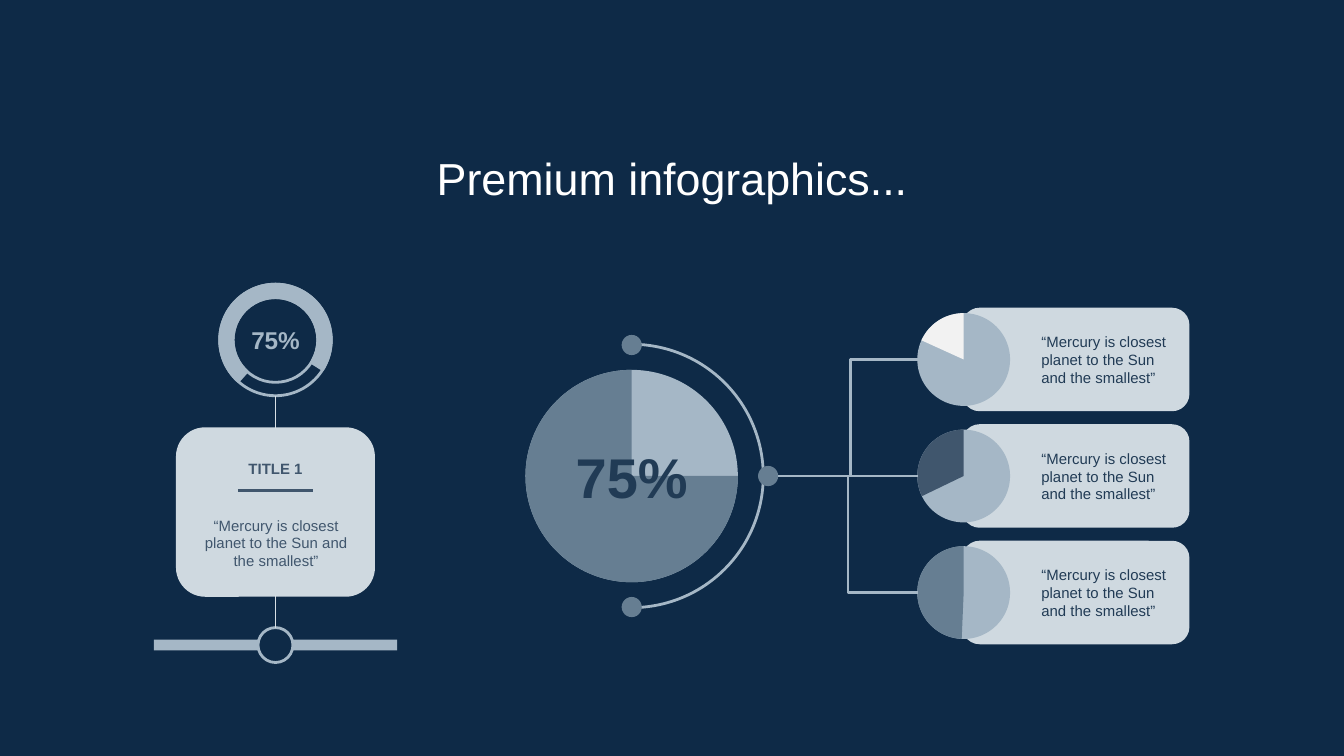
from dataclasses import dataclass

from lxml import etree
from pptx import Presentation
from pptx import util as u
from pptx.dml.color import RGBColor
from pptx.enum import shapes, text
from pptx.oxml import ns

COLORS = {
    "night": "0E2A47", "navy": "213B55", "slate": "40566D", "steel": "667E92",
    "mist": "A5B7C6", "card": "CFD9E0", "thread": "D7DFE5", "light": "F2F2F2",
    "white": "FFFFFF",
}
QUOTE = "“Mercury is closest planet to the Sun and the smallest”"
FONT = "Arial"
DEGREE = 0.6  # one degree in the units of a shape adjustment
TOP_ANGLE = 270
WIDTH, HEIGHT = u.Inches(10), u.Inches(5.625)
CELL = WIDTH / 100  # the grid has 100 columns and 56.25 rows
AXIS = 35.42  # row through the middle of the large pie
PITCH = 8.67  # rows from one card to the next
Shape = shapes.MSO_SHAPE
Line = shapes.MSO_CONNECTOR


@dataclass(frozen=True)
class Box:
    column: float
    row: float
    columns: float
    rows: float

    def lengths(self) -> list[int]:
        return [grid(n) for n in (self.column, self.row, self.columns, self.rows)]


@dataclass(frozen=True)
class Label:
    box: Box
    words: str
    size: float
    color: str
    bold: bool = False
    centered: bool = True
    anchor: text.MSO_ANCHOR = text.MSO_ANCHOR.MIDDLE


@dataclass(frozen=True)
class Share:
    """One card on the right, with the angle where its pie slice starts."""
    row: float
    start: float
    color: str


def grid(cells: float) -> int:
    return round(cells * CELL)


def rgb(name: str) -> RGBColor:
    return RGBColor.from_string(COLORS[name])


def around(column: float, row: float, diameter: float) -> Box:
    """Square box centred on a point."""
    return Box(column - diameter / 2, row - diameter / 2, diameter, diameter)


def draw_shape(container, kind: Shape, box: Box, fill: str | None = None,
               line: str | None = None, adjustments: tuple[float, ...] = ()):
    shape = container.add_shape(kind, *box.lengths())
    shape.shadow.inherit = False
    for index, value in enumerate(adjustments):
        shape.adjustments[index] = value
    if fill:
        shape.fill.solid()
        shape.fill.fore_color.rgb = rgb(fill)
    else:
        shape.fill.background()
    if line:
        shape.line.color.rgb = rgb(line)
        shape.line.width = u.Pt(1.5)
    else:
        shape.line.fill.background()
    return shape


def draw_line(slide, start: tuple[float, float], end: tuple[float, float], color: str,
              width: float = 1.5, kind: Line = Line.STRAIGHT, bend: float = 0.5):
    connector = slide.shapes.add_connector(kind, *(grid(n) for n in start + end))
    connector.line.color.rgb = rgb(color)
    connector.line.width = u.Pt(width)
    properties = connector._element.spPr
    etree.SubElement(properties, ns.qn("a:effectLst"))
    if kind == Line.ELBOW:
        geometry = properties.find(ns.qn("a:prstGeom"))
        values = geometry.find(ns.qn("a:avLst"))
        etree.SubElement(values, ns.qn("a:gd"), name="adj1", fmla=f"val {round(bend * 100000)}")
    return connector


def draw_label(slide, label: Label) -> None:
    frame = slide.shapes.add_textbox(*label.box.lengths()).text_frame
    frame.word_wrap = True
    frame.vertical_anchor = label.anchor
    frame.margin_left = frame.margin_right = u.Inches(0.1)
    frame.margin_top = frame.margin_bottom = u.Inches(0.1)
    paragraph = frame.paragraphs[0]
    paragraph.text = label.words
    paragraph.alignment = text.PP_ALIGN.CENTER if label.centered else text.PP_ALIGN.LEFT
    paragraph.font.name = FONT
    paragraph.font.size = u.Pt(label.size)
    paragraph.font.bold = label.bold
    paragraph.font.color.rgb = rgb(label.color)


def draw_pie(slide, box: Box, start: float, color: str) -> None:
    """Disc with a slice that runs clockwise from start to the top."""
    group = slide.shapes.add_group_shape().shapes
    draw_shape(group, Shape.OVAL, box, "mist")
    draw_shape(group, Shape.PIE, box, color,
               adjustments=(start * DEGREE, TOP_ANGLE * DEGREE))


def draw_timeline(slide) -> None:
    middle = 20.5
    draw_shape(slide.shapes, Shape.RECTANGLE, Box(11.45, 47.6, 18.1, 0.8), "mist")
    gauge = slide.shapes.add_group_shape().shapes
    ring = around(middle, 25.3, 8.3)
    draw_shape(gauge, Shape.DONUT, ring, line="mist", adjustments=(0.12,))
    draw_shape(gauge, Shape.BLOCK_ARC, ring, "mist", "mist",
               (131.9 * DEGREE, 32.1 * DEGREE, 0.12))
    card = draw_shape(slide.shapes, Shape.ROUNDED_RECTANGLE, Box(13.2, 31.9, 14.6, 12.4),
                      "card", "card", (0.167,))
    draw_shape(slide.shapes, Shape.OVAL, around(middle, 48, 2.6), "night", "mist")
    draw_line(slide, (middle, 29.5), (middle, 31.9), "thread", 0.75).end_connect(card, 0)
    draw_line(slide, (middle, 44.3), (middle, 46.7), "thread", 0.75).begin_connect(card, 2)
    draw_line(slide, (17.7, 36.5), (23.3, 36.5), "slate")
    for label in (
        Label(Box(14.2, 37.9, 12.7, 5), QUOTE, 8, "slate"),
        Label(Box(15.9, 33.7, 9.2, 2.4), "TITLE 1", 8, "slate", bold=True),
        Label(Box(17.35, 23.3, 6.3, 4), "75%", 13, "mist", bold=True),
    ):
        draw_label(slide, label)


def draw_breakdown(slide, shares: list[Share]) -> None:
    center, hub, branch = 47, 57.15, 68.3
    draw_shape(slide.shapes, Shape.ARC, around(center, AXIS, 19.6), line="mist",
               adjustments=(TOP_ANGLE * DEGREE, 88.31 * DEGREE))
    draw_pie(slide, around(center, AXIS, 15.8), 0, "steel")
    for share in shares:
        draw_pie(slide, around(71.7, share.row, 6.9), share.start, share.color)
    for column, row in ((center, AXIS - 9.75), (center, AXIS + 9.75), (hub, AXIS)):
        draw_shape(slide.shapes, Shape.OVAL, around(column, row, 1.5), "steel")
    start = (hub + 0.75, AXIS)
    upper, middle, lower = ((branch, share.row) for share in shares)
    draw_line(slide, start, upper, "mist", kind=Line.ELBOW, bend=0.52)
    draw_line(slide, start, lower, "mist", kind=Line.ELBOW)
    draw_line(slide, start, middle, "mist")
    draw_label(slide, Label(Box(41.55, 32, 10.9, 6.9), "75%", 30, "navy", bold=True))


def main() -> None:
    presentation = Presentation()
    presentation.slide_width, presentation.slide_height = WIDTH, HEIGHT
    slide = presentation.slides.add_slide(presentation.slide_layouts[6])
    slide.background.fill.solid()
    slide.background.fill.fore_color.rgb = rgb("night")

    slices = ((204.5, "light"), (154.2, "slate"), (92.4, "steel"))
    shares = [Share(AXIS + (index - 1) * PITCH, *part) for index, part in enumerate(slices)]
    for share in shares:
        draw_shape(slide.shapes, Shape.ROUNDED_RECTANGLE,
                   Box(71.6, share.row - 3.85, 16.9, 7.7), "card", adjustments=(0.167,))
        draw_label(slide, Label(Box(76.5, share.row - 2.4, 12.4, 4.8), QUOTE, 8, "navy",
                                centered=False))
    draw_label(slide, Label(Box(11.45, 10.2, 77.1, 5.3), "Premium infographics...", 24,
                            "white", anchor=text.MSO_ANCHOR.TOP))
    draw_timeline(slide)
    draw_breakdown(slide, shares)
    presentation.save("out.pptx")


if __name__ == "__main__":
    main()
